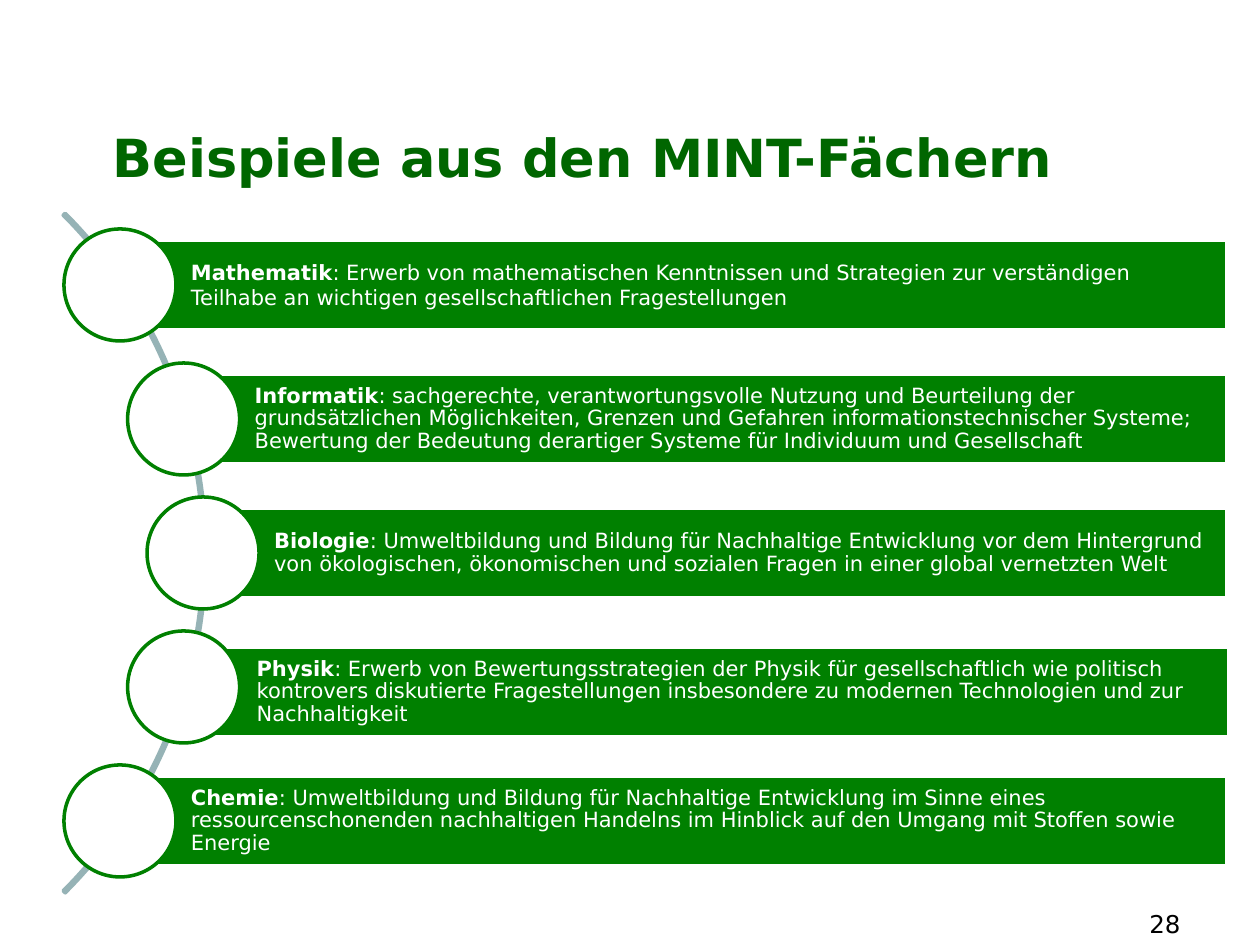
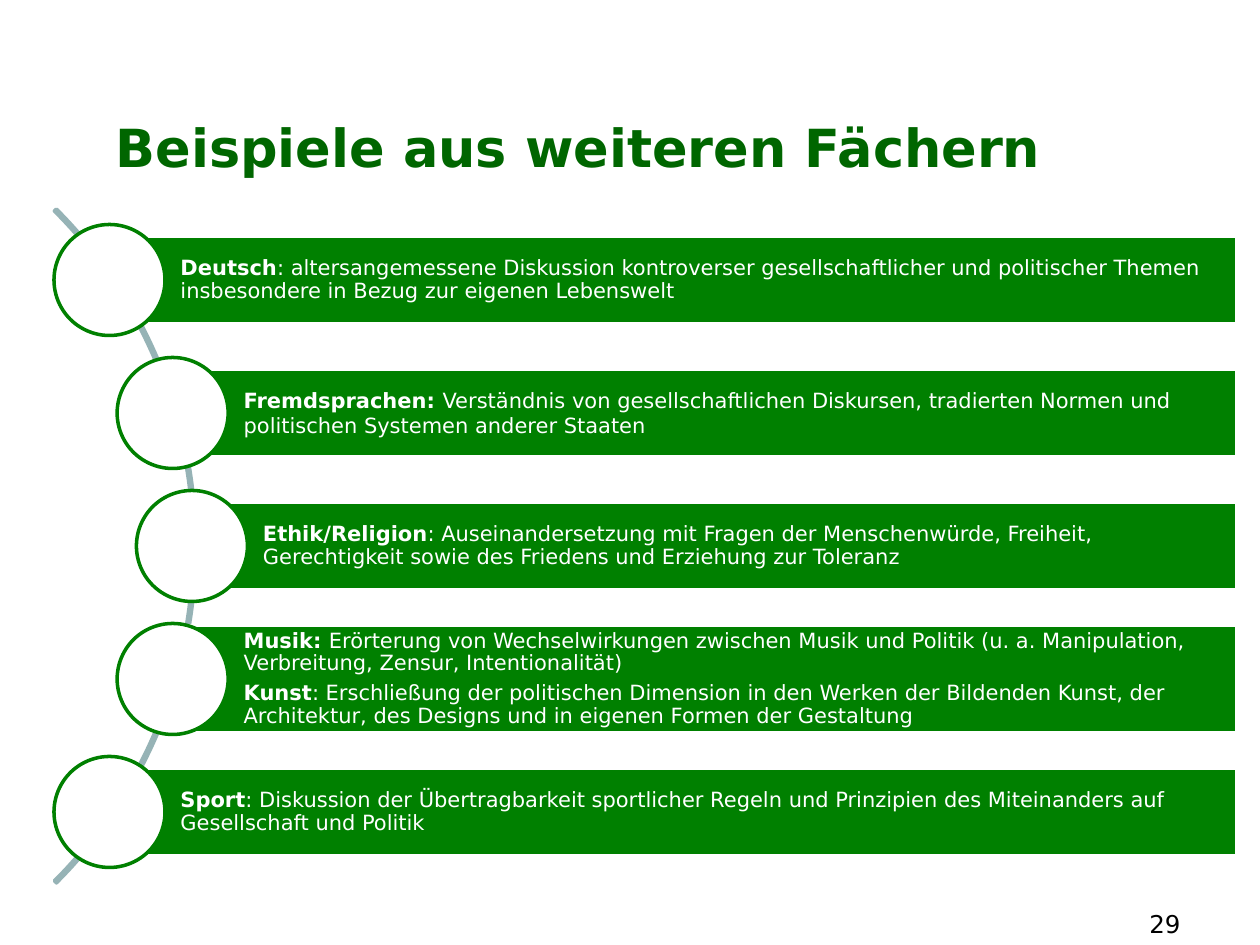
from dataclasses import dataclass

from pptx import Presentation
from pptx.dml.color import RGBColor
from pptx.enum.shapes import MSO_SHAPE
from pptx.enum.text import MSO_ANCHOR, MSO_AUTO_SIZE, PP_ALIGN
from pptx.util import Emu, Pt

RECTANGLE, OVAL, BLOCK_ARC = MSO_SHAPE.RECTANGLE, MSO_SHAPE.OVAL, MSO_SHAPE.BLOCK_ARC
LEFT, RIGHT = PP_ALIGN.LEFT, PP_ALIGN.RIGHT
MIDDLE = MSO_ANCHOR.MIDDLE
NO_AUTOFIT = MSO_AUTO_SIZE.NONE

EMU_PER_PX = 914400 / 126
TITLE_ONLY = 5
CIRCLE_SHIFTS = (0, 0.475, 0.62, 0.475, 0)


@dataclass(frozen=True)
class Theme:
    font: str = "DejaVu Sans"
    title: RGBColor = RGBColor(0x00, 0x66, 0x00)
    green: RGBColor = RGBColor(0x00, 0x80, 0x00)
    arc: RGBColor = RGBColor(0x96, 0xB3, 0xB6)
    white: RGBColor = RGBColor(0xFF, 0xFF, 0xFF)
    black: RGBColor = RGBColor(0x00, 0x00, 0x00)
    title_size: int = 30
    body_size: int = 12
    number_size: int = 14
    line_width: int = 2
    tight_spacing: float = 0.9
    space_after: float = 4.2


@dataclass(frozen=True)
class Subject:
    paragraphs: tuple
    tight: bool = True
    bar_height: int = 0
    nudge: tuple = (0, 0)


@dataclass(frozen=True)
class Diagram:
    left: int
    middle: int
    pitch: int
    circle: int
    bar_height: int
    bar_right: int
    arc_left: int
    arc_size: int


def px(length):
    return Emu(round(length * EMU_PER_PX))


class SubjectDeck:
    def __init__(self, theme):
        self.theme = theme
        self.deck = Presentation()
        self.deck.slide_width, self.deck.slide_height = px(1260), px(945)
        self.page = None

    def add_page(self, title, left, top, number):
        self.page = self.deck.slides.add_slide(self.deck.slide_layouts[TITLE_ONLY])
        box = self.page.shapes.title
        box.left, box.top, box.width, box.height = map(px, (left, top, 1102, 78))
        box.text_frame.auto_size = NO_AUTOFIT
        box.text_frame.vertical_anchor = MIDDLE
        para = box.text_frame.paragraphs[0]
        para.text = title
        para.alignment = LEFT
        self.style(para, self.theme.title_size, self.theme.title, True)
        self.add_number(number)

    def add_number(self, number):
        box = self.page.shapes.add_textbox(*map(px, (907, 903, 286, 42)))
        box.text_frame.word_wrap = True
        para = box.text_frame.paragraphs[0]
        para.text = str(number)
        para.alignment = RIGHT
        self.style(para, self.theme.number_size, self.theme.black)

    def style(self, para, size, color, bold=None):
        para.font.name = self.theme.font
        para.font.size = Pt(size)
        para.font.color.rgb = color
        para.font.bold = bold

    def add_shape(self, kind, left, top, width, height, fill, line):
        shape = self.page.shapes.add_shape(kind, *map(px, (left, top, width, height)))
        shape.shadow.inherit = False
        shape.fill.solid()
        shape.fill.fore_color.rgb = fill
        shape.line.color.rgb = line
        shape.line.width = Pt(self.theme.line_width)
        return shape

    def add_arc(self, left, middle, size):
        color = self.theme.arc
        arc = self.add_shape(BLOCK_ARC, left, middle - size / 2, size, size, color, color)
        for index, value in enumerate((189, 27, 0.003)):
            arc.adjustments[index] = value

    def add_bar(self, subject, left, top, width, height):
        bar = self.add_shape(RECTANGLE, left, top, width, height,
                             self.theme.green, self.theme.white)
        frame = bar.text_frame
        frame.word_wrap = True
        frame.vertical_anchor = MIDDLE
        frame.margin_left = px(71)
        frame.margin_top = frame.margin_right = frame.margin_bottom = px(4)
        for index, (name, description) in enumerate(subject.paragraphs):
            para = frame.add_paragraph() if index else frame.paragraphs[0]
            para.alignment = LEFT
            if subject.tight:
                para.line_spacing = self.theme.tight_spacing
                para.space_after = Pt(self.theme.space_after)
            self.style(para, self.theme.body_size, self.theme.white)
            for text, bold in ((name, True), (description, False)):
                span = para.add_run()
                span.text = text
                span.font.bold = bold

    def add_diagram(self, diagram, subjects):
        self.add_arc(diagram.arc_left, diagram.middle, diagram.arc_size)
        radius = diagram.circle / 2
        for row, (subject, shift) in enumerate(zip(subjects, CIRCLE_SHIFTS)):
            left = diagram.left + shift * diagram.pitch
            center = diagram.middle + (row - 2) * diagram.pitch
            bar_left = left + radius
            height = subject.bar_height or diagram.bar_height
            right_nudge, down_nudge = subject.nudge
            self.add_bar(subject, bar_left + right_nudge, center - height / 2 + down_nudge,
                         diagram.bar_right - bar_left, height)
            self.add_shape(OVAL, left, center - radius, diagram.circle, diagram.circle,
                           self.theme.white, self.theme.green)


STEM_DIAGRAM = Diagram(left=64, middle=553, pitch=134, circle=112, bar_height=89,
                       bar_right=1227, arc_left=-755, arc_size=961)
OTHER_DIAGRAM = Diagram(left=54, middle=546, pitch=133, circle=111, bar_height=88,
                        bar_right=1237, arc_left=-757, arc_size=953)

STEM_SUBJECTS = (
    Subject((("Mathematik", ": Erwerb von mathematischen Kenntnissen und Strategien zur "
              "verständigen Teilhabe an wichtigen gesellschaftlichen Fragestellungen"),),
            tight=False),
    Subject((("Informatik", ": sachgerechte, verantwortungsvolle Nutzung und Beurteilung der "
              "grundsätzlichen Möglichkeiten, Grenzen und Gefahren informationstechnischer "
              "Systeme; Bewertung der Bedeutung derartiger Systeme für Individuum und "
              "Gesellschaft"),)),
    Subject((("Biologie", ": Umweltbildung und Bildung für Nachhaltige Entwicklung vor dem "
              "Hintergrund von ökologischen, ökonomischen und sozialen Fragen in einer global "
              "vernetzten Welt"),)),
    Subject((("Physik", ": Erwerb von Bewertungsstrategien der Physik für gesellschaftlich wie "
              "politisch kontrovers diskutierte Fragestellungen insbesondere zu modernen "
              "Technologien und zur Nachhaltigkeit"),), nudge=(2, 5)),
    Subject((("Chemie", ": Umweltbildung und Bildung für Nachhaltige Entwicklung im Sinne eines "
              "ressourcenschonenden nachhaltigen Handelns im Hinblick auf den Umgang mit Stoffen "
              "sowie Energie"),)),
)

OTHER_SUBJECTS = (
    Subject((("Deutsch", ": altersangemessene Diskussion kontroverser gesellschaftlicher und "
              "politischer Themen insbesondere in Bezug zur eigenen Lebenswelt"),)),
    Subject((("Fremdsprachen: ", "Verständnis von gesellschaftlichen Diskursen, tradierten "
              "Normen und politischen Systemen anderer Staaten"),), tight=False),
    Subject((("Ethik/Religion", ": Auseinandersetzung mit Fragen der Menschenwürde, Freiheit, "
              "Gerechtigkeit sowie des Friedens und Erziehung zur Toleranz"),)),
    Subject((("Musik: ", "Erörterung von Wechselwirkungen zwischen Musik und Politik "
              "(u. a. Manipulation, Verbreitung, Zensur, Intentionalität)"),
             ("Kunst", ": Erschließung der politischen Dimension in den Werken der Bildenden "
              "Kunst, der Architektur, des Designs und in eigenen Formen der Gestaltung")),
            bar_height=107),
    Subject((("Sport", ": Diskussion der Übertragbarkeit sportlicher Regeln und Prinzipien des "
              "Miteinanders auf Gesellschaft und Politik"),)),
)


def main():
    builder = SubjectDeck(Theme())
    builder.add_page("Beispiele aus den MINT-Fächern", 100, 118, 28)
    builder.add_diagram(STEM_DIAGRAM, STEM_SUBJECTS)
    builder.add_page("Beispiele aus weiteren Fächern", 103, 108, 29)
    builder.add_diagram(OTHER_DIAGRAM, OTHER_SUBJECTS)
    builder.deck.save("out.pptx")


if __name__ == "__main__":
    main()
